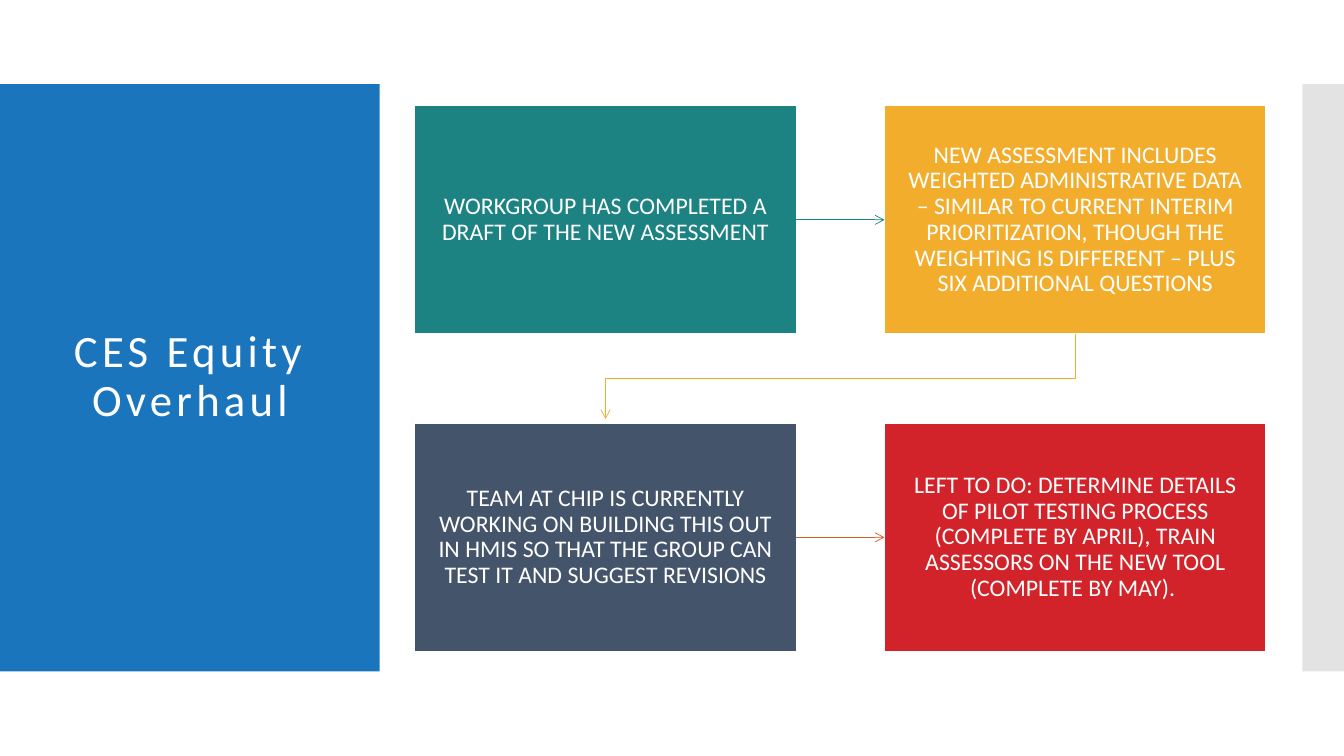
from lxml import etree
from pptx import Presentation
from pptx.dml.color import RGBColor
from pptx.enum.shapes import MSO_CONNECTOR, MSO_SHAPE
from pptx.enum.text import MSO_ANCHOR, PP_ALIGN
from pptx.oxml.ns import qn
from pptx.util import Cm, Pt

RECT = MSO_SHAPE.RECTANGLE
STRAIGHT = MSO_CONNECTOR.STRAIGHT
MIDDLE = MSO_ANCHOR.MIDDLE
CENTER = PP_ALIGN.CENTER
TOP, LEFT, BOTTOM, RIGHT = range(4)

# Content
TITLE = "CES Equity Overhaul"
STEPS = [
    ("WORKGROUP HAS COMPLETED A DRAFT OF THE NEW ASSESSMENT", "teal"),
    ("NEW ASSESSMENT INCLUDES WEIGHTED ADMINISTRATIVE DATA – SIMILAR TO CURRENT "
     "INTERIM PRIORITIZATION, THOUGH THE WEIGHTING IS DIFFERENT – PLUS SIX "
     "ADDITIONAL QUESTIONS", "amber"),
    ("TEAM AT CHIP IS CURRENTLY WORKING ON BUILDING THIS OUT IN HMIS SO THAT THE "
     "GROUP CAN TEST IT AND SUGGEST REVISIONS", "slate"),
    ("LEFT TO DO: DETERMINE DETAILS OF PILOT TESTING PROCESS (COMPLETE BY APRIL), "
     "TRAIN ASSESSORS ON THE NEW TOOL (COMPLETE BY MAY). ", "red"),
]

THEME = {
    "font": "Calibri", "title": 32, "body": 17,
    "white": "FFFFFF", "blue": "1B75BC", "grey": "C8C8C8",
    "teal": "1C8282", "amber": "F3AD2C", "slate": "44546A",
    "red": "D2232A", "orange": "D05F27",
}

# Layout in centimetres
SLIDE_W, SLIDE_H = 33.87, 19.05
BAND_Y, BAND_H = 2.12, 14.8
PANEL_W, STRIP_X = 9.57, 32.82
GRID_X, GRID_Y = 10.45, 2.66
BOX_W, BOX_H = 9.62, 5.76
PITCH_X, PITCH_Y = 11.84, 8
COLUMNS = 2
ELBOW_GAP = 0.1


def color(name):
    return RGBColor.from_string(THEME[name])


def add_rect(slide, x, y, w, h, fill, outline=None, alpha=None):
    sp = slide.shapes.add_shape(RECT, Cm(x), Cm(y), Cm(w), Cm(h))
    sp.shadow.inherit = False
    sp.fill.solid()
    sp.fill.fore_color.rgb = color(fill)
    if alpha is not None:
        clr = sp.fill._xPr.find(qn("a:solidFill"))[0]
        etree.SubElement(clr, qn("a:alpha"), val=str(alpha * 1000))
    if outline:
        sp.line.color.rgb = color(outline)
        sp.line.width = Pt(1)
    else:
        sp.line.fill.background()
    return sp


def set_text(sp, text, size="body", fill="white", inset=0.48, spacing=0):
    tf = sp.text_frame
    tf.word_wrap = True
    tf.vertical_anchor = MIDDLE
    tf.margin_left = tf.margin_right = tf.margin_top = tf.margin_bottom = Cm(inset)
    p = tf.paragraphs[0]
    p.alignment = CENTER
    p.line_spacing = 0.9
    r = p.add_run()
    r.text = text
    r.font.name = THEME["font"]
    r.font.size = Pt(THEME[size])
    r.font.color.rgb = color(fill)
    if spacing:
        r.font._element.set("spc", str(spacing * 100))


def style_arrow(sp, fill):
    sp.line.color.rgb = color(fill)
    sp.line.width = Pt(0.5)
    etree.SubElement(sp.line._get_or_add_ln(), qn("a:tailEnd"), type="arrow")


def add_arrow(slide, start, end, fill):
    cx = slide.shapes.add_connector(STRAIGHT, 0, 0, 0, 0)
    cx.begin_connect(start, RIGHT)
    cx.end_connect(end, LEFT)
    style_arrow(cx, fill)
    etree.SubElement(cx._element.spPr, qn("a:effectLst"))


def add_elbow(slide, start, end, fill):
    x1, y1 = start.left + start.width // 2, start.top + start.height
    x2, y2 = end.left + end.width // 2, end.top - Cm(ELBOW_GAP)
    mid = (y1 + end.top) // 2
    builder = slide.shapes.build_freeform(x1, y1)
    builder.add_line_segments([(x1, mid), (x2, mid), (x2, y2)], close=False)
    sp = builder.convert_to_shape()
    sp.fill.background()
    style_arrow(sp, fill)
    sp.shadow.inherit = False


def main():
    prs = Presentation()
    prs.slide_width, prs.slide_height = Cm(SLIDE_W), Cm(SLIDE_H)
    slide = prs.slides.add_slide(prs.slide_layouts[6])

    # Side panels and title
    add_rect(slide, 0, BAND_Y, PANEL_W, BAND_H, "blue")
    add_rect(slide, STRIP_X, BAND_Y, SLIDE_W - STRIP_X, BAND_H, "grey", alpha=50)
    title = slide.shapes.add_textbox(Cm(0.7), Cm(3.12), Cm(8.18), Cm(12.78))
    set_text(title, TITLE, size="title", inset=0.25, spacing=3)

    # Step boxes
    boxes = []
    for i, (text, fill) in enumerate(STEPS):
        row, col = divmod(i, COLUMNS)
        sp = add_rect(slide, GRID_X + col * PITCH_X, GRID_Y + row * PITCH_Y,
                      BOX_W, BOX_H, fill, outline="white")
        set_text(sp, text)
        boxes.append(sp)

    # Arrows between steps
    add_arrow(slide, boxes[0], boxes[1], "teal")
    add_elbow(slide, boxes[1], boxes[2], "amber")
    add_arrow(slide, boxes[2], boxes[3], "orange")

    prs.save("out.pptx")


if __name__ == "__main__":
    main()
